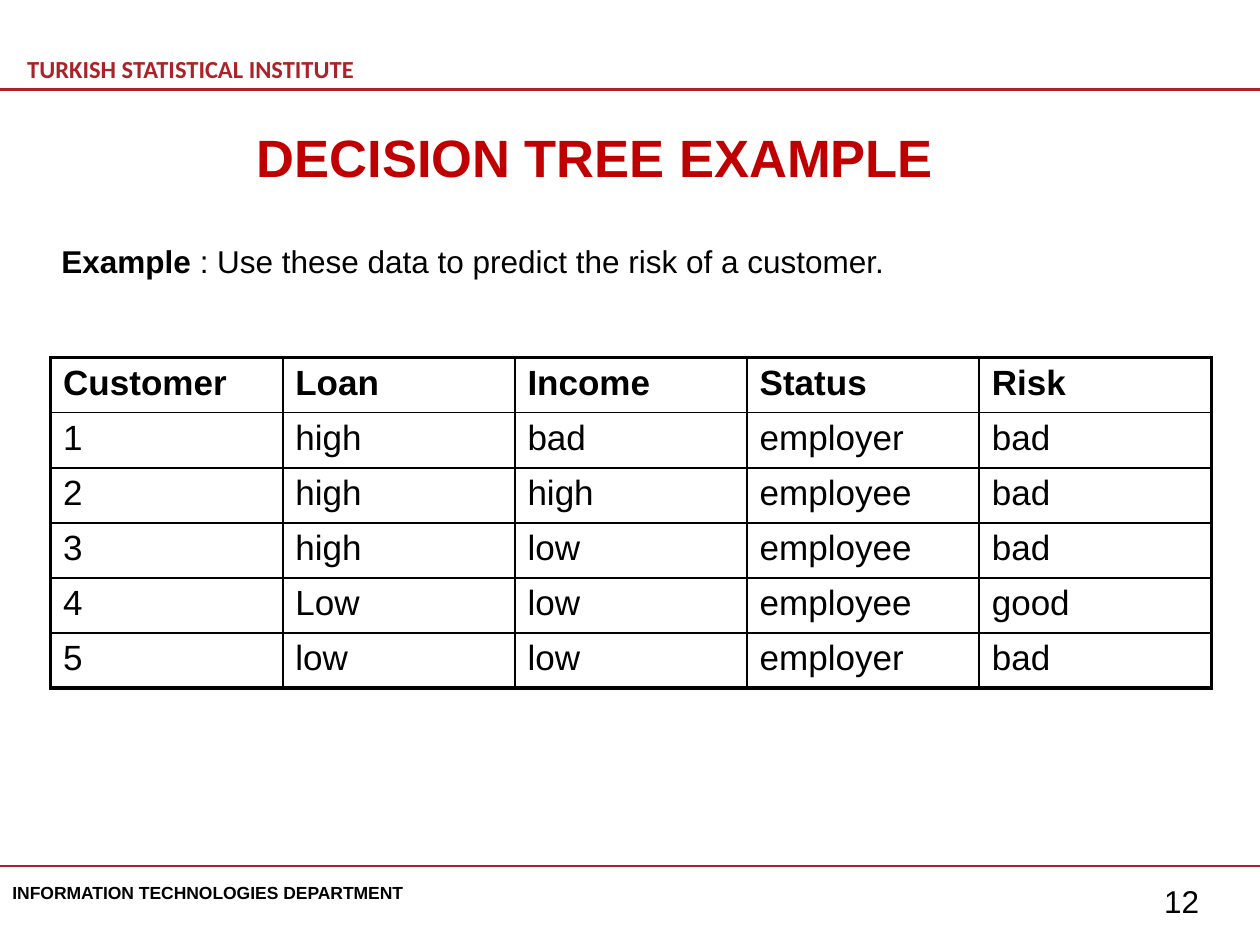
from dataclasses import dataclass

import pptx
import pptx.dml.color
import pptx.enum.shapes
import pptx.enum.text
import pptx.oxml.ns
import pptx.util
from lxml import etree
from pptx.util import Cm

ALIGN = pptx.enum.text.PP_ALIGN
ANCHOR = pptx.enum.text.MSO_ANCHOR


@dataclass(frozen=True)
class Theme:
    font: str = "Arial"
    heading_font: str = "Calibri"
    black: str = "000000"
    band_red: str = "AB2328"
    title_red: str = "C00000"
    title_size: int = 30
    table_size: int = 20
    body_size: int = 18
    heading_size: int = 14
    footer_size: int = 10
    rule_width: float = 1.5
    inner_border: float = 1
    outer_border: float = 2.25


THEME = Theme()


@dataclass(frozen=True)
class Run:
    text: str
    size: int
    bold: bool = False
    color: str = THEME.black
    font: str = THEME.font


@dataclass(frozen=True)
class Label:
    left: float
    top: float
    width: float
    height: float
    runs: tuple[Run, ...]
    align: ALIGN = ALIGN.LEFT
    anchor: ANCHOR = ANCHOR.TOP
    wrap: bool = True


LABELS = (
    Label(0.3, 0.89, 8.99, 0.99,
          (Run("TURKISH STATISTICAL INSTITUTE", THEME.heading_size, True,
               THEME.band_red, THEME.heading_font),), anchor=ANCHOR.MIDDLE),
    Label(0, 17.65, 8.53, 0.69,
          (Run("INFORMATION TECHNOLOGIES DEPARTMENT", THEME.footer_size, True),), wrap=False),
    Label(23.22, 17.65, 1.78, 1.02, (Run("12", THEME.body_size),)),
    Label(0.99, 2.39, 22.02, 1.55,
          (Run("DECISION TREE EXAMPLE", THEME.title_size, True, THEME.title_red),),
          align=ALIGN.CENTER),
    Label(0.99, 4.75, 17.25, 1.02,
          (Run("Example ", THEME.body_size, True),
           Run(": Use these data to predict the risk of a customer.", THEME.body_size)),
          wrap=False),
)
RULE_TOPS = (1.8, 17.46)
CUSTOMERS = (
    ("Customer", "Loan", "Income", "Status", "Risk"),
    ("1", "high", "bad", "employer", "bad"),
    ("2", "high", "high", "employee", "bad"),
    ("3", "high", "low", "employee", "bad"),
    ("4", "Low", "low", "employee", "good"),
    ("5", "low", "low", "employer", "bad"),
)
TABLE_LEFT, TABLE_TOP = 1.02, 7.21
COLUMN_WIDTH, ROW_HEIGHT = 4.68, 1.11


def add_run(paragraph, content: Run) -> None:
    run = paragraph.add_run()
    run.text = content.text
    run.font.name = content.font
    run.font.size = pptx.util.Pt(content.size)
    run.font.bold = content.bold
    run.font.color.rgb = pptx.dml.color.RGBColor.from_string(content.color)


def add_label(slide, label: Label) -> None:
    box = slide.shapes.add_textbox(
        Cm(label.left), Cm(label.top), Cm(label.width), Cm(label.height))
    frame = box.text_frame
    frame.word_wrap = label.wrap
    frame.vertical_anchor = label.anchor
    paragraph = frame.paragraphs[0]
    paragraph.alignment = label.align
    for run in label.runs:
        add_run(paragraph, run)


def add_rule(slide, top: float, width: int) -> None:
    """Draw a red line across the whole slide."""
    line = slide.shapes.add_connector(
        pptx.enum.shapes.MSO_CONNECTOR.STRAIGHT, 0, Cm(top), width, Cm(top))
    line.line.color.rgb = pptx.dml.color.RGBColor.from_string(THEME.band_red)
    line.line.width = pptx.util.Pt(THEME.rule_width)
    etree.SubElement(line._element.spPr, pptx.oxml.ns.qn("a:effectLst"))


def set_borders(cell, outer_sides: dict[str, bool]) -> None:
    """Give each side the outer or the inner width; borders precede the cell fill."""
    properties = cell._tc.get_or_add_tcPr()
    qn = pptx.oxml.ns.qn
    for position, (side, is_outer) in enumerate(outer_sides.items()):
        width = THEME.outer_border if is_outer else THEME.inner_border
        border = etree.Element(qn(f"a:ln{side}"), w=str(int(pptx.util.Pt(width))))
        fill = etree.SubElement(border, qn("a:solidFill"))
        etree.SubElement(fill, qn("a:srgbClr"), val=THEME.black)
        properties.insert(position, border)


def add_customer_table(slide) -> None:
    row_count, column_count = len(CUSTOMERS), len(CUSTOMERS[0])
    table = slide.shapes.add_table(
        row_count, column_count, Cm(TABLE_LEFT), Cm(TABLE_TOP),
        Cm(COLUMN_WIDTH * column_count), Cm(ROW_HEIGHT * row_count)).table
    table.horz_banding = False
    for column in table.columns:
        column.width = Cm(COLUMN_WIDTH)
    for row in table.rows:
        row.height = Cm(ROW_HEIGHT)
    for row_index, values in enumerate(CUSTOMERS):
        for column_index, value in enumerate(values):
            cell = table.cell(row_index, column_index)
            cell.fill.background()
            add_run(cell.text_frame.paragraphs[0],
                    Run(value, THEME.table_size, bold=row_index == 0))
            set_borders(cell, {
                "L": column_index == 0,
                "R": column_index == column_count - 1,
                "T": row_index == 0,
                "B": row_index == row_count - 1,
            })


def main() -> None:
    presentation = pptx.Presentation()
    presentation.slide_width = Cm(25.4)
    presentation.slide_height = Cm(19.05)
    slide = presentation.slides.add_slide(presentation.slide_layouts[6])
    for top in RULE_TOPS:
        add_rule(slide, top, presentation.slide_width)
    for label in LABELS:
        add_label(slide, label)
    add_customer_table(slide)
    presentation.save("out.pptx")


if __name__ == "__main__":
    main()
